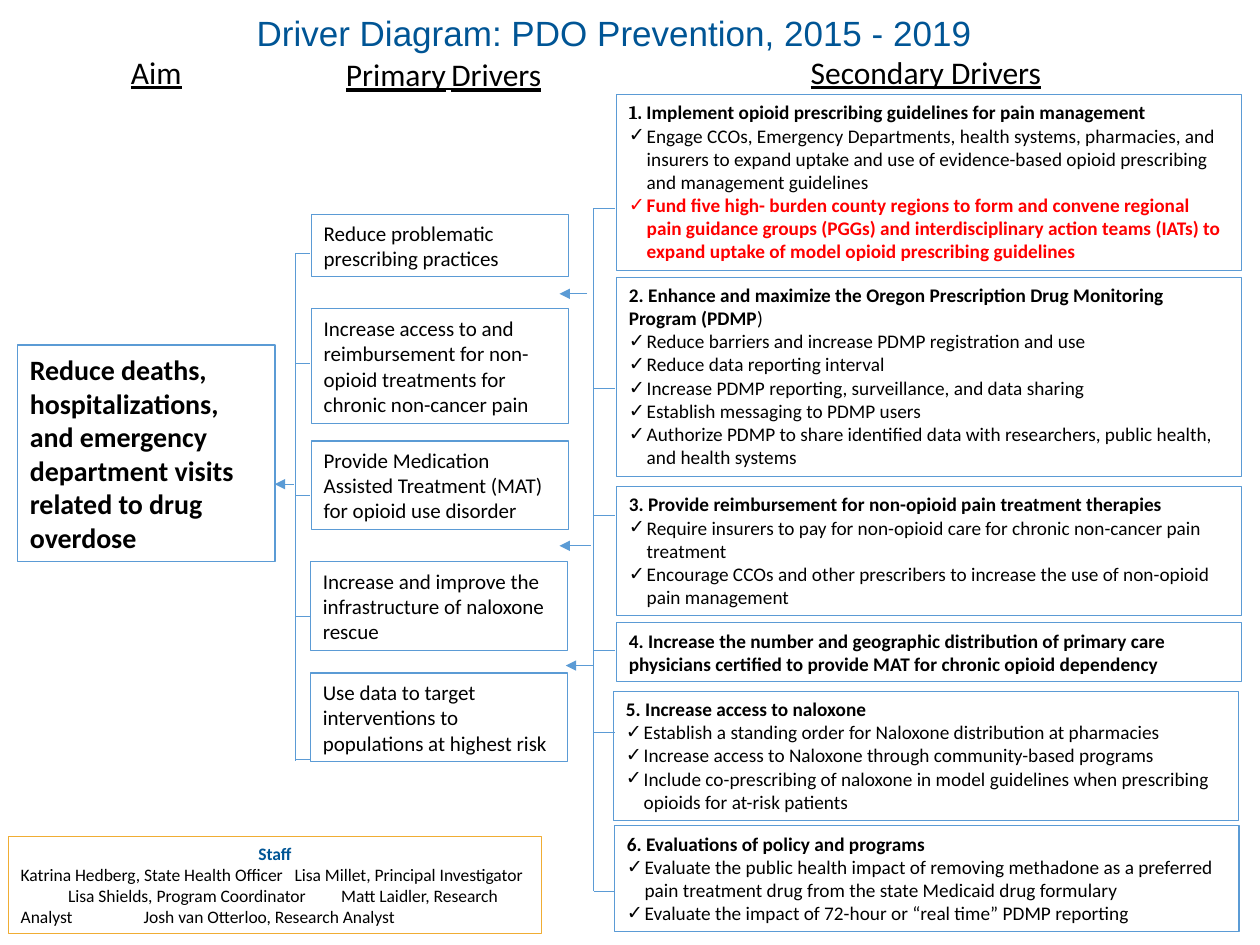
import pptx
import pptx.util
import pptx.dml.color
import pptx.enum.text
import pptx.enum.shapes
import pptx.oxml.ns
import lxml.etree

Pt = pptx.util.Pt
ALIGN = pptx.enum.text.PP_ALIGN
ANCHOR = pptx.enum.text.MSO_ANCHOR
BLUE, NAVY, GOLD = "5B9BD5", "005595", "F0AD34"
BODY = {"name": "Calibri", "size": 11, "bold": False, "color": "000000"}
BOLD = {**BODY, "bold": True}
RED = {**BOLD, "color": "FF0000"}
ITEM = {**BODY, "size": 12}
GOAL = {**BOLD, "size": 16}
HEAD = {**BODY, "size": 18, "underline": True}
STAFF = {**BODY, "size": 10}

DRIVERS = [
    (0.5, 0, 35.8, "Reduce problematic prescribing practices"),
    (0.5, 54, 65.5, "Increase access to and reimbursement for non-opioid treatments "
     "for chronic non-cancer pain"),
    (0.5, 129.6, 50.8, "Provide Medication Assisted Treatment (MAT) for opioid use disorder"),
    (0, 198.5, 50.8, "Increase and improve the infrastructure of naloxone rescue"),
    (0, 262.2, 50.8, "Use data to target interventions to populations at highest risk"),
]

ACTIONS = [
    (1.7, 0, 100.6, [("1. ", {**BOLD, "name": "Cambria"}),
                     ("Implement opioid prescribing guidelines for pain management", BOLD)], [
        ("Engage CCOs, Emergency Departments, health systems, pharmacies, and insurers to "
         "expand uptake and use of evidence-based opioid prescribing and management guidelines", BODY),
        ("Fund five high- burden county regions to form and convene regional pain guidance "
         "groups (PGGs) and interdisciplinary action teams (IATs) to expand uptake of model "
         "opioid prescribing guidelines", RED)]),
    (1.7, 104.4, 113.8, [("2. Enhance and maximize the Oregon Prescription Drug Monitoring "
                          "Program (PDMP", BOLD), (")", BODY)], [
        ("Reduce barriers and increase PDMP registration and use", BODY),
        ("Reduce data reporting interval", BODY),
        ("Increase PDMP reporting, surveillance, and data sharing", BODY),
        ("Establish messaging to PDMP users", BODY),
        ("Authorize PDMP to share identified data with researchers, public health, "
         "and health systems", BODY)]),
    (1.7, 224, 73.8, [("3. Provide reimbursement for non-opioid pain treatment therapies", BOLD)], [
        ("Require insurers to pay for non-opioid care for chronic non-cancer pain treatment", BODY),
        ("Encourage CCOs and other prescribers to increase the use of non-opioid "
         "pain management", BODY)]),
    (1.7, 301.8, 33.8, [("4. Increase the number and geographic distribution of primary care "
                         "physicians certified to provide MAT for chronic opioid dependency", BOLD)], []),
    (0, 341, 74, [("5. Increase access to naloxone", BOLD)], [
        ("Establish a standing order for Naloxone distribution at pharmacies", BODY),
        ("Increase access to Naloxone through community-based programs", BODY),
        ("Include co-prescribing of naloxone in model guidelines when prescribing opioids "
         "for at-risk patients", BODY)]),
    (0.5, 417.8, 60.5, [("6. Evaluations of policy and programs", BOLD)], [
        ("Evaluate the public health impact of removing methadone as a preferred pain "
         "treatment drug from the state Medicaid drug formulary", BODY),
        ("Evaluate the impact of 72-hour or “real time” PDMP reporting", BODY)]),
]

TEAM = [
    (0, [("Katrina Hedberg, State Health Officer", 4.5),
         ("Lisa Millet, Principal Investigator", 0)]),
    (27, [("Lisa Shields, Program Coordinator", 18.1),
          ("Matt Laidler, Research Analyst", 38.4),
          ("Josh van Otterloo, Research Analyst", 0)]),
]


def tint(code):
    return pptx.dml.color.RGBColor.from_string(code)


def style(font, form):
    for key, val in form.items():
        if key == "color":
            font.color.rgb = tint(val)
        else:
            setattr(font, key, Pt(val) if key == "size" else val)


def fill_para(para, runs, align=ALIGN.LEFT):
    para.alignment = align
    for text, form in runs:
        run = para.add_run()
        run.text = text
        style(run.font, form)


def child(node, tag, **attrs):
    return lxml.etree.SubElement(node, pptx.oxml.ns.qn(tag), attrs)


def indent(para, left, first):
    props = para._p.get_or_add_pPr()
    props.set("marL", str(Pt(left)))
    props.set("indent", str(Pt(first)))
    return props


def set_bullet(para):
    props = indent(para, 10.2, -10.2)
    child(props, "a:buFont", typeface="Arial")
    child(props, "a:buChar", char="✓")


def add_gap(para, extra):
    run = para.add_run()
    run.text = " "
    style(run.font, STAFF)
    run._r.get_or_add_rPr().set("spc", str(round(extra * 100)))


def add_box(slide, box, line=BLUE, width=0.75, anchor=ANCHOR.TOP):
    shape = slide.shapes.add_shape(
        pptx.enum.shapes.MSO_SHAPE.RECTANGLE, *map(Pt, box))
    shape.shadow.inherit = False
    shape.fill.background()
    shape.line.color.rgb = tint(line)
    shape.line.width = Pt(width)
    frame = shape.text_frame
    frame.word_wrap = True
    frame.vertical_anchor = anchor
    return frame


def add_line(slide, start, end, arrow=False):
    line = slide.shapes.add_connector(
        pptx.enum.shapes.MSO_CONNECTOR.STRAIGHT, *map(Pt, start + end))
    line.line.color.rgb = tint(BLUE)
    line.line.width = Pt(0.5)
    if arrow:
        child(line.line._get_or_add_ln(), "a:tailEnd", type="triangle")
    child(line._element.spPr, "a:effectLst")


def add_title(slide, box):
    title = slide.shapes.title
    for key, val in zip(("left", "top", "width", "height"), box):
        setattr(title, key, Pt(val))
    frame = title.text_frame
    frame.auto_size = pptx.enum.text.MSO_AUTO_SIZE.NONE
    frame.vertical_anchor = ANCHOR.MIDDLE
    fill_para(frame.paragraphs[0], [("Driver Diagram: PDO Prevention, 2015 - 2019", {
        "name": "Arial", "size": 20, "color": NAVY})], ALIGN.CENTER)


def add_head(slide, box, runs):
    frame = slide.shapes.add_textbox(*map(Pt, box)).text_frame
    frame.word_wrap = True
    fill_para(frame.paragraphs[0], runs, ALIGN.CENTER)


def add_aim(slide, box):
    frame = add_box(slide, box, width=1, anchor=ANCHOR.MIDDLE)
    fill_para(frame.paragraphs[0], [(
        "Reduce deaths, hospitalizations, and emergency department visits "
        "related to drug overdose", GOAL)])


def add_drivers(slide, box):
    left, top, width, _ = box
    for shift, down, high, text in DRIVERS:
        frame = add_box(slide, (left + shift, top + down, width, high), anchor=ANCHOR.MIDDLE)
        fill_para(frame.paragraphs[0], [(text, ITEM)])


def add_actions(slide, box):
    left, top, width, _ = box
    for shift, down, high, head, items in ACTIONS:
        frame = add_box(slide, (left + shift, top + down, width, high))
        fill_para(frame.paragraphs[0], head)
        for item in items:
            para = frame.add_paragraph()
            fill_para(para, [item])
            set_bullet(para)


def add_staff(slide, box):
    frame = add_box(slide, box, line=GOLD)
    head = frame.paragraphs[0]
    head.space_before = Pt(2.2)
    fill_para(head, [("Staff", {**STAFF, "bold": True, "color": NAVY})], ALIGN.CENTER)
    for first, people in TEAM:
        para = frame.add_paragraph()
        indent(para, 0, first)
        for text, extra in people:
            fill_para(para, [(text, STAFF)])
            if extra:
                add_gap(para, extra)


def add_bracket(slide, box, ticks, arrows):
    left, top, width, height = box
    add_line(slide, (left, top), (left, top + height))
    for down in ticks:
        add_line(slide, (left, top + down), (left + width, top + down))
    for down, start, end in arrows:
        add_line(slide, (left - start, top + down), (left - end, top + down), True)


def main():
    deck = pptx.Presentation()
    deck.slide_width, deck.slide_height = Pt(720), Pt(540)
    slide = deck.slides.add_slide(deck.slide_layouts[5])
    add_title(slide, (11.5, 3, 679, 31.5))
    add_head(slide, (15.8, 26.6, 147, 29), [("Aim", HEAD)])
    add_head(slide, (180, 28, 147, 29), [
        ("Primary", HEAD), (" ", {**HEAD, "size": 13.5}), ("Drivers", HEAD)])
    add_head(slide, (350.9, 26.6, 356.4, 29), [("Secondary Drivers", HEAD)])
    add_aim(slide, (10, 197.3, 147, 123.6))
    add_drivers(slide, (177.4, 122.4, 147, 313))
    add_actions(slide, (350.6, 54, 357, 478.3))
    add_staff(slide, (4.8, 478, 304.6, 55.5))
    add_bracket(slide, (168.7, 144.6, 8.5, 290.5),
                [0, 63, 138.5, 207.5, 289.6], [(132.1, 0.9, 11.7)])
    add_bracket(slide, (339.3, 118.9, 12, 390.5),
                [0, 103, 175.7, 252.7, 299.5, 390.5],
                [(49, 3.8, 19.6), (193, 1.6, 19.6), (261.4, 0, 16)])
    deck.save("out.pptx")


if __name__ == "__main__":
    main()
